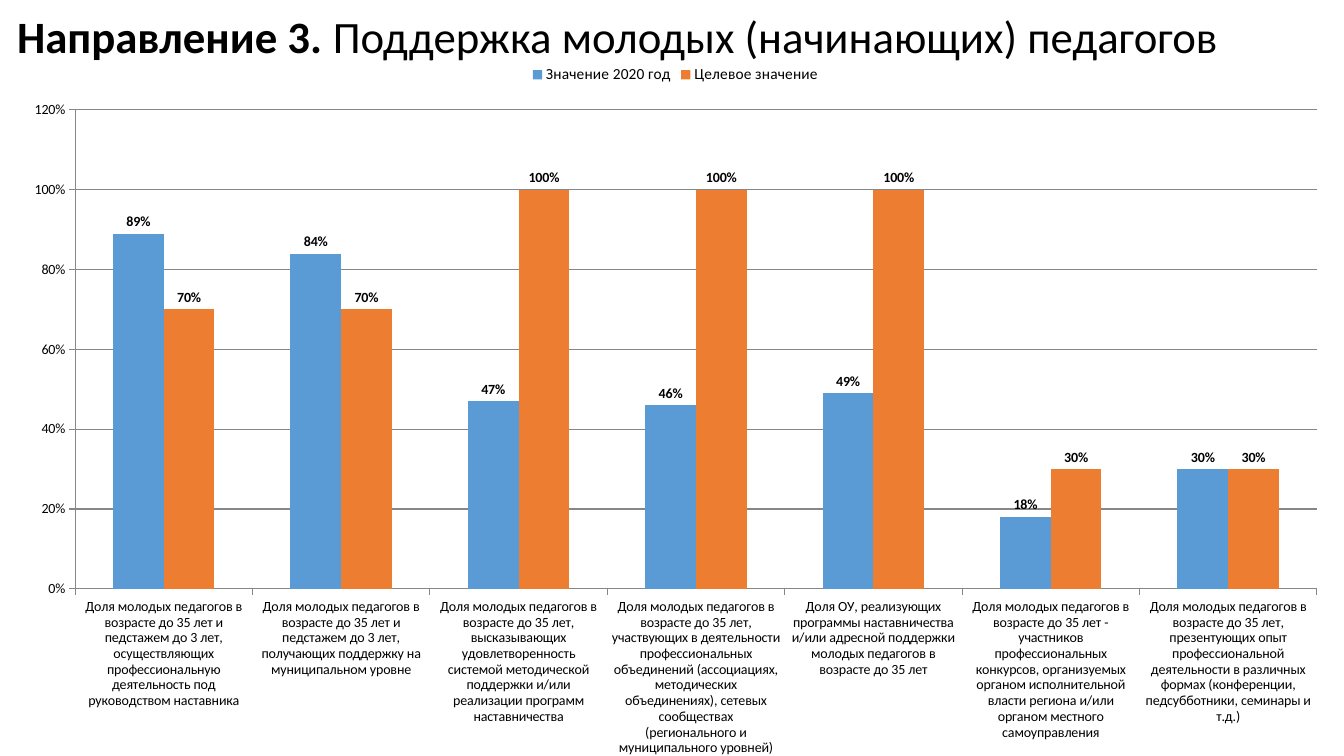
from pptx import Presentation
from pptx.chart.data import CategoryChartData
from pptx.dml.color import RGBColor
from pptx.enum.chart import XL_CHART_TYPE, XL_LABEL_POSITION, XL_LEGEND_POSITION, XL_TICK_MARK
from pptx.enum.text import MSO_ANCHOR, MSO_AUTO_SIZE, PP_ALIGN
from pptx.oxml import parse_xml
from pptx.oxml.ns import nsdecls, qn
from pptx.util import Pt

SLIDE_W, SLIDE_H = 1344, 756
FONT = "Calibri"
COLORS = {"text": "000000", "actual": "5B9BD5", "target": "ED7D31", "grid": "878787"}


def px(n):
    return round(n * 12192000 / SLIDE_W)


def rgb(name):
    return RGBColor.from_string(COLORS[name])


prs = Presentation()
prs.slide_width, prs.slide_height = px(SLIDE_W), px(SLIDE_H)
s = prs.slides.add_slide(prs.slide_layouts[5])

# Title
title = s.shapes.title
title.left, title.top, title.width, title.height = px(7), px(13), px(1300), px(52)
tf = title.text_frame
tf.word_wrap = True
tf.auto_size = MSO_AUTO_SIZE.NONE
tf.vertical_anchor = MSO_ANCHOR.MIDDLE
p = tf.paragraphs[0]
p.alignment = PP_ALIGN.LEFT
p.line_spacing = 0.9
for text, bold in [("Направление 3. ", True),
                   ("Поддержка молодых (начинающих) педагогов", False)]:
    r = p.add_run()
    r.text = text
    r.font.name, r.font.size, r.font.bold = FONT, Pt(32), bold
    r.font.color.rgb = rgb("text")

# Chart
indicators = [
    ("Доля молодых педагогов в возрасте до 35 лет и педстажем до 3 лет, "
     "осуществляющих профессиональную деятельность под руководством наставника", 0.89, 0.7),
    ("Доля молодых педагогов в возрасте до 35 лет и педстажем до 3 лет, "
     "получающих поддержку на муниципальном уровне", 0.84, 0.7),
    ("Доля молодых педагогов в возрасте до 35 лет, высказывающих удовлетворенность "
     "системой методической поддержки и/или реализации программ наставничества", 0.47, 1),
    ("Доля молодых педагогов в возрасте до 35 лет, участвующих в деятельности "
     "профессиональных объединений (ассоциациях, методических объединениях), "
     "сетевых сообществах (регионального и муниципального уровней)", 0.46, 1),
    ("Доля ОУ, реализующих программы наставничества и/или адресной поддержки "
     "молодых педагогов в возрасте до 35 лет", 0.49, 1),
    ("Доля молодых педагогов в возрасте до 35 лет - участников профессиональных "
     "конкурсов, организуемых органом исполнительной власти региона и/или "
     "органом местного самоуправления", 0.18, 0.3),
    ("Доля молодых педагогов в возрасте до 35 лет, презентующих опыт "
     "профессиональной деятельности в различных формах (конференции, "
     "педсубботники, семинары и т.д.)", 0.3, 0.3),
]
names, actual, target = zip(*indicators)
data = CategoryChartData(number_format="0%")
data.categories = names
data.add_series("Значение 2020 год", actual)
data.add_series("Целевое значение", target)

left, top, width, height = 7, 54, 1337, 702
chart = s.shapes.add_chart(XL_CHART_TYPE.COLUMN_CLUSTERED, px(left), px(top),
                           px(width), px(height), data).chart
chart.has_title = False
chart.font.name, chart.font.size = FONT, Pt(10)
chart.font.color.rgb = rgb("text")

chart.has_legend = True
legend = chart.legend
legend.position = XL_LEGEND_POSITION.TOP
legend.include_in_layout = False
legend.font.name, legend.font.size = FONT, Pt(11)
legend.font.color.rgb = rgb("text")

plot = chart.plots[0]
plot.gap_width, plot.overlap = 150, 0
plot.vary_by_categories = False
for series, color in zip(plot.series, ["actual", "target"]):
    series.format.fill.solid()
    series.format.fill.fore_color.rgb = rgb(color)
    series.invert_if_negative = False
    labels = series.data_labels
    labels.show_value = True
    labels.number_format, labels.number_format_is_linked = "0%", False
    labels.position = XL_LABEL_POSITION.OUTSIDE_END
    labels.font.name, labels.font.size, labels.font.bold = FONT, Pt(10), True
    labels.font.color.rgb = rgb("text")

value_axis = chart.value_axis
value_axis.minimum_scale, value_axis.maximum_scale, value_axis.major_unit = 0, 1.2, 0.2
value_axis.has_major_gridlines = True
value_axis.tick_labels.number_format = "0%"
value_axis.tick_labels.number_format_is_linked = False
for axis in (value_axis, chart.category_axis):
    axis.major_tick_mark = XL_TICK_MARK.OUTSIDE
for part in (value_axis, chart.category_axis, value_axis.major_gridlines):
    part.format.line.color.rgb = rgb("grid")
    part.format.line.width = Pt(0.75)

# Plot area inside the axes, as fractions of the chart frame
fractions = {"x": (75 - left) / width, "y": (110 - top) / height,
             "w": 1242 / width, "h": 480 / height}
plot_area = chart.element.find(".//" + qn("c:plotArea"))
for old in plot_area.findall(qn("c:layout")):
    plot_area.remove(old)
plot_area.insert(0, parse_xml(
    f'<c:layout {nsdecls("c")}><c:manualLayout><c:layoutTarget val="inner"/>'
    '<c:xMode val="edge"/><c:yMode val="edge"/>'
    + "".join(f'<c:{key} val="{val:.4f}"/>' for key, val in fractions.items())
    + "</c:manualLayout></c:layout>"))

prs.save("out.pptx")
